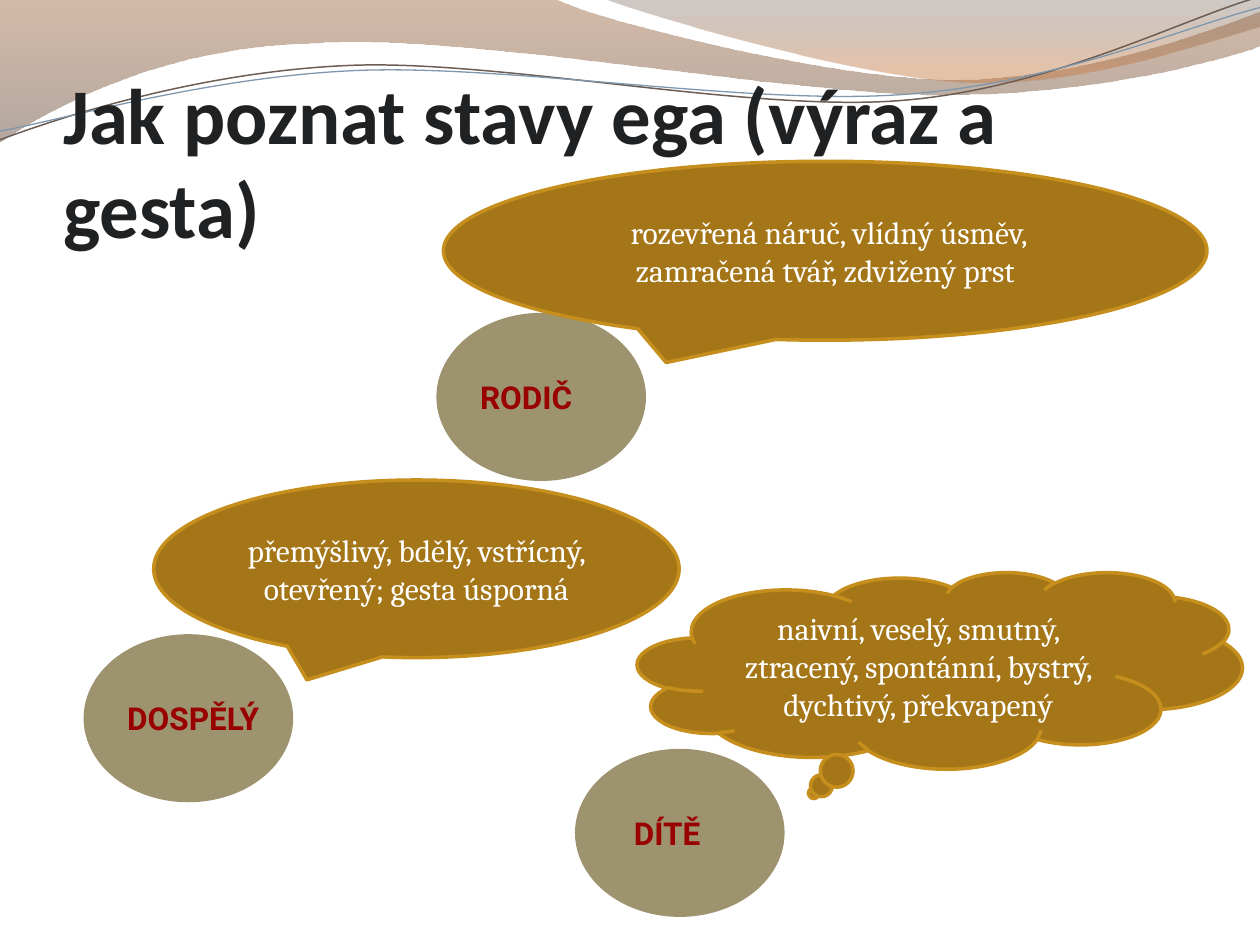
"""Build a slide on the looks and gestures that reveal each ego state."""
from lxml import etree
from pptx import Presentation
from pptx.dml.color import RGBColor
from pptx.enum.shapes import MSO_SHAPE
from pptx.enum.text import MSO_ANCHOR, MSO_AUTO_SIZE, PP_ALIGN
from pptx.oxml.ns import qn
from pptx.util import Inches, Pt

OVAL, SPEECH, CLOUD = MSO_SHAPE.OVAL, MSO_SHAPE.OVAL_CALLOUT, MSO_SHAPE.CLOUD_CALLOUT
LEFT, CENTER = PP_ALIGN.LEFT, PP_ALIGN.CENTER
MIDDLE, BOTTOM = MSO_ANCHOR.MIDDLE, MSO_ANCHOR.BOTTOM

THEME = {
    "title": {"name": "Calibri", "size": 45, "bold": True, "color": "1F2123"},
    "state": {"name": "Roboto", "size": 18, "bold": True, "color": "990000"},
    "signs": {"name": "Cambria", "size": 18, "bold": False, "color": "FFFFFF"},
    "oval": {"fill": "9D936F", "line": "9D936F", "width": 1},
    "bubble": {"fill": "A57617", "line": "C68E1C", "width": 2},
    "band": [(0, "9F683F", 45), (1, "755F51", 55)],
    "crest": [(0, "5D4E44", 30), (0.8, "C77A42", 45)],
    "brown": ("6C5E55", 0.85),
    "blue": ("7E97AD", 0.75),
}

deck = Presentation()
deck.slide_width, deck.slide_height = Inches(10), Inches(7.5)
COL, ROW = deck.slide_width / 10, deck.slide_height / 7.5
slide = deck.slides.add_slide(deck.slide_layouts[5])
shapes = slide.shapes


def draw(start, steps, close):
    """Draw an outline whose steps are lines (x, y) or cubic curves (three pairs)."""
    spots = [(s[i] * COL, s[i + 1] * ROW) for s in steps for i in range(0, len(s), 2)]
    pen = shapes.build_freeform(start[0] * COL, start[1] * ROW, scale=1.0)
    pen.add_line_segments(spots, close=close)
    shape = pen.convert_to_shape()
    lines = iter(list(shape.element.spPr.iter(qn("a:lnTo"))))
    for step in steps:
        first = next(lines)
        if len(step) == 6:
            first.tag = qn("a:cubicBezTo")
            for line in (next(lines), next(lines)):
                first.append(line[0])
                line.getparent().remove(line)
    return shape


def write(shape, text, style, align, anchor, inset, wrap):
    """Put styled text into a shape."""
    frame = shape.text_frame
    frame.text = text
    form = {"auto_size": MSO_AUTO_SIZE.NONE, "word_wrap": wrap, "vertical_anchor": anchor,
            "margin_left": int(inset[0] * COL), "margin_top": int(inset[1] * ROW),
            "margin_right": int(inset[2] * COL), "margin_bottom": int(inset[3] * ROW)}
    for key, value in form.items():
        setattr(frame, key, value)
    frame.paragraphs[0].alignment = align
    font = frame.paragraphs[0].runs[0].font
    look = THEME[style]
    for key, value in {"name": look["name"], "size": Pt(look["size"]), "bold": look["bold"]}.items():
        setattr(font, key, value)
    font.color.rgb = RGBColor.from_string(look["color"])


waves = [
    ("band", (0, 0), [
        (4.4, -0.01), (4.76, 0.17, 6.64, 0.63, 7.58, 0.63), (8.53, 0.63, 9.58, 0.26, 10, 0.09),
        (10.01, 0.36), (9.83, 0.44, 8.7, 0.76, 7.46, 0.75), (6.22, 0.75, 3.82, 0.28, 2.57, 0.34),
        (1.29, 0.36, 0.46, 0.83, -0.01, 1.13)]),
    ("crest", (4.79, -0.01), [
        (5.09, 0.11, 6.82, 0.62, 7.69, 0.65), (8.56, 0.69, 9.61, 0.32, 10, 0.21), (10, 0)]),
    ("brown", (0, 1.11), [
        (0.48, 0.93, 1.58, 0.57, 2.77, 0.52), (3.95, 0.47, 5.93, 0.89, 7.13, 0.8),
        (8.33, 0.71, 9.38, 0.15, 9.98, -0.02)]),
    ("blue", (0, 1.04), [
        (0.47, 0.96, 1.64, 0.61, 2.83, 0.56), (4.03, 0.51, 5.97, 0.84, 7.17, 0.75),
        (8.36, 0.67, 9.41, 0.21, 10, 0.06)]),
]
for name, start, steps in waves:
    solid = name in ("band", "crest")
    wave = draw(start, steps, solid)
    wave.shadow.inherit = False
    if solid:
        wave.line.fill.background()
        wave.fill.gradient()
        wave.fill.gradient_angle = 270
        for stop, (place, color, alpha) in zip(wave.fill.gradient_stops, THEME[name]):
            stop.position = place
            stop.color.rgb = RGBColor.from_string(color)
        tints = wave.element.spPr.iter(qn("a:srgbClr"))
        for tint, (place, color, alpha) in zip(tints, THEME[name]):
            etree.SubElement(tint, qn("a:alpha")).set("val", str(alpha * 1000))
    else:
        color, width = THEME[name]
        wave.fill.background()
        wave.line.color.rgb = RGBColor.from_string(color)
        wave.line.width = Pt(width)

title = shapes.title
shapes.element.append(title.element)
for key, value in {"left": 0.5 * COL, "top": 0.77 * ROW, "width": 9 * COL, "height": 1.25 * ROW}.items():
    setattr(title, key, int(value))
write(title, "Jak poznat stavy ega (výraz a gesta)", "title", LEFT, BOTTOM, (0, 0.05, 0, 0), True)

SIZE = (1.65, 1.32)
PAD = (0.1, 0.05, 0.1, 0.05)
SHIFT = (0.22, 0.05, 0.1, 0.05)
items = [
    (OVAL, (3.47, 2.49, *SIZE), PAD, "RODIČ"),
    (SPEECH, (3.52, 1.28, 6.06, 1.42), PAD, " rozevřená náruč, vlídný úsměv, zamračená tvář, zdvižený prst"),
    (OVAL, (4.57, 5.95, *SIZE), SHIFT, "DÍTĚ"),
    (CLOUD, (5.06, 4.54, 4.8, 1.56), PAD,
     "naivní, veselý, smutný, ztracený, spontánní, bystrý, dychtivý, překvapený"),
    (OVAL, (0.67, 5.04, *SIZE), PAD, "DOSPĚLÝ"),
    (SPEECH, (1.22, 3.81, 4.17, 1.41), PAD, "přemýšlivý, bdělý, vstřícný, otevřený; gesta úsporná"),
]
for kind, (x, y, w, h), inset, text in items:
    state = kind == OVAL
    look = THEME["oval" if state else "bubble"]
    item = shapes.add_shape(kind, int(x * COL), int(y * ROW), int(w * COL), int(h * ROW))
    item.shadow.inherit = False
    item.fill.solid()
    item.fill.fore_color.rgb = RGBColor.from_string(look["fill"])
    item.line.color.rgb = RGBColor.from_string(look["line"])
    item.line.width = Pt(look["width"])
    write(item, text, "state" if state else "signs", LEFT if state else CENTER, MIDDLE, inset, not state)

deck.save("out.pptx")
